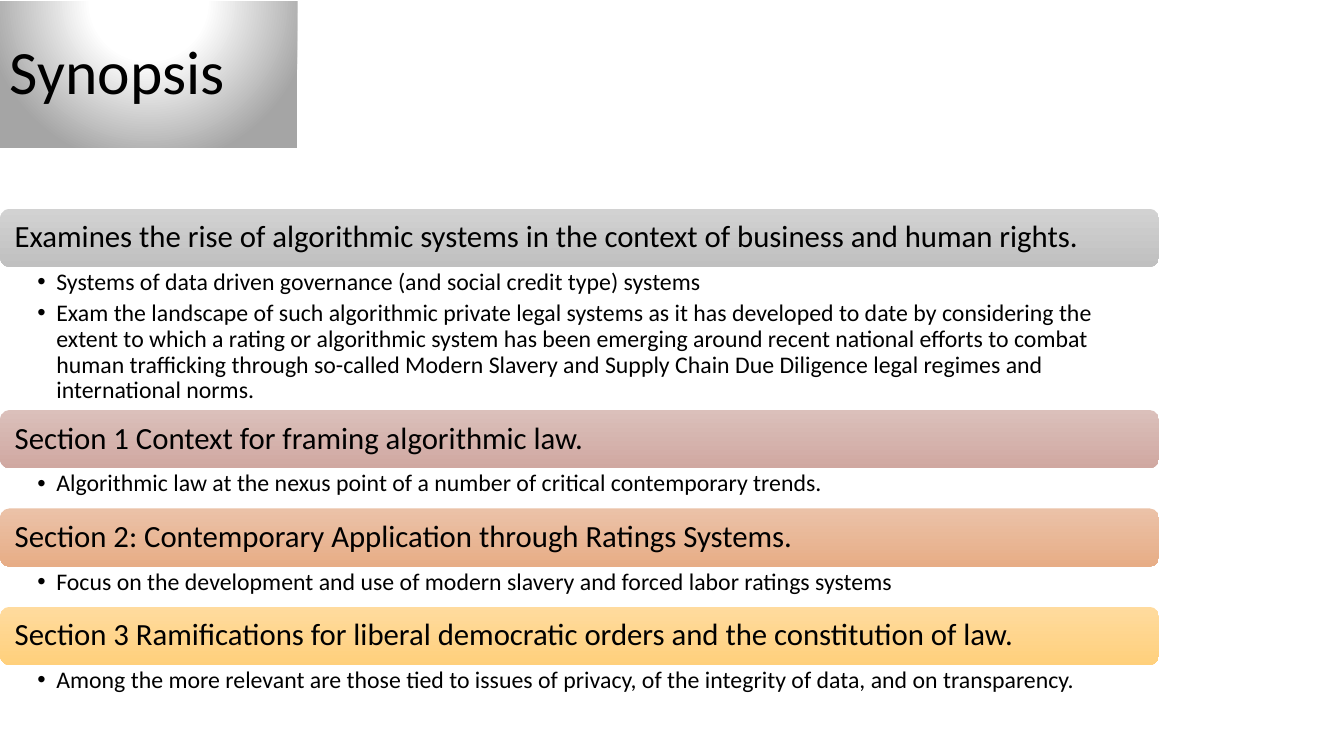
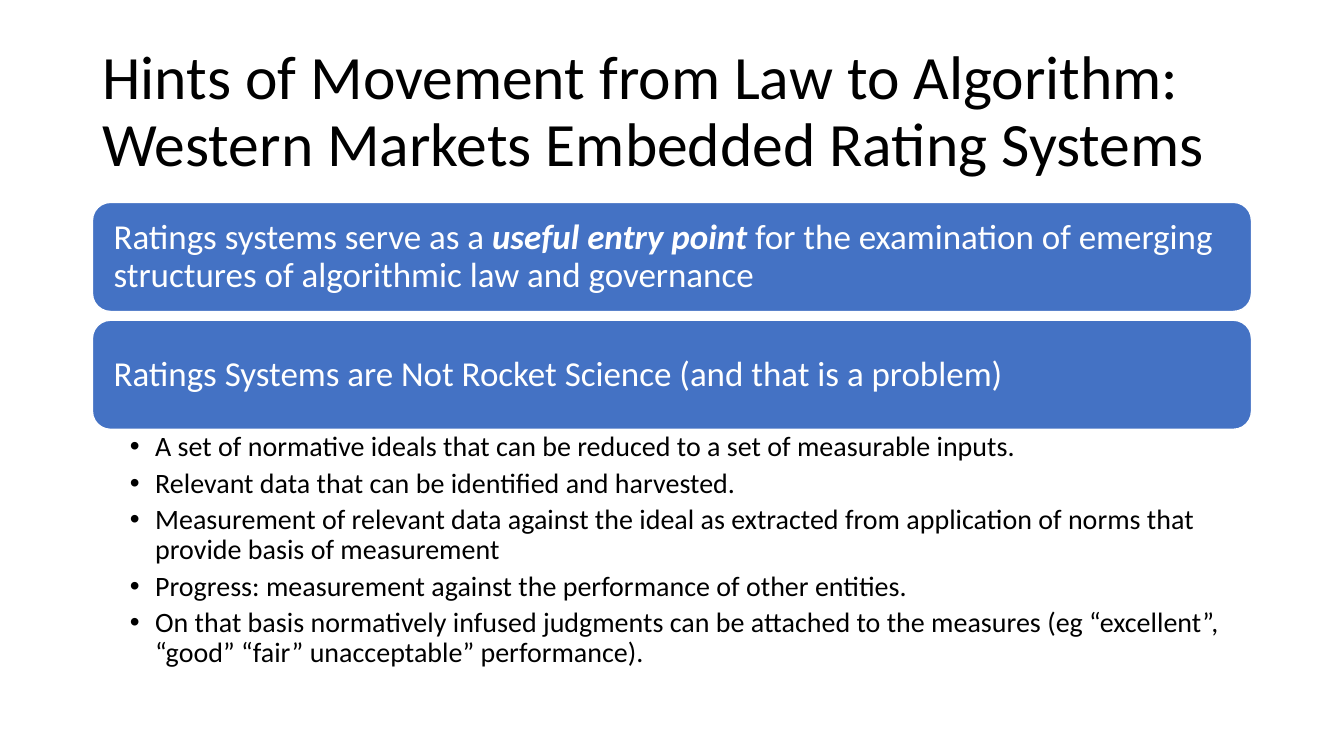
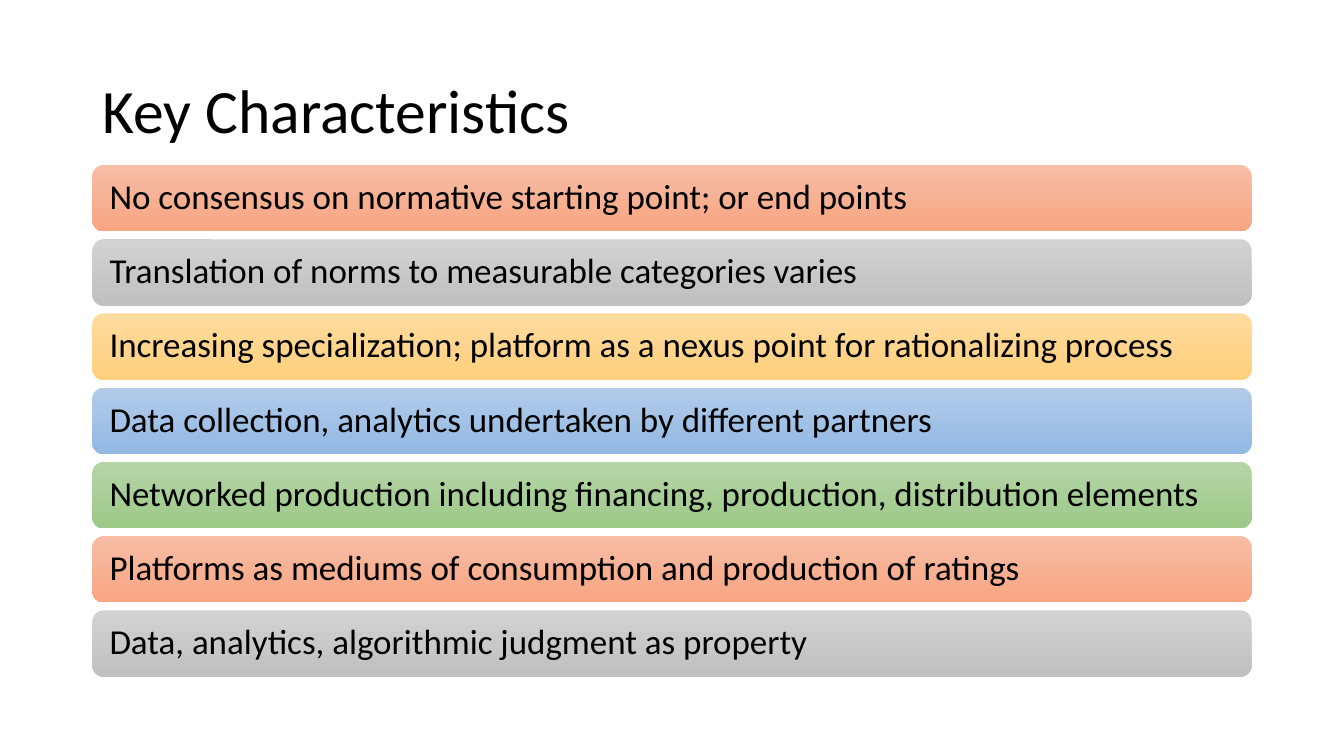
from lxml.etree import SubElement
from pptx import Presentation
from pptx.dml.color import RGBColor
from pptx.enum.shapes import MSO_SHAPE as Shape
from pptx.enum.text import MSO_ANCHOR as Anchor, MSO_AUTO_SIZE as AutoSize, PP_ALIGN as Align
from pptx.oxml import parse_xml
from pptx.oxml.ns import nsdecls, qn
from pptx.util import Cm, Pt

COLORS = {
    "ink": "000000", "paper": "FFFFFF", "blue": "4472C4", "title_edge": "A5A5A5",
    "gray_top": "D2D2D2", "gray_end": "C0C0C0",
    "rose_top": "DBC0BB", "rose_end": "D0A8A1",
    "sand_top": "EBC2A8", "sand_end": "E7AD86",
    "gold_top": "FFDB9E", "gold_end": "FFD07C",
    "coral_top": "F7BDA5", "coral_end": "F8A582",
    "sky_top": "B1CBE9", "sky_end": "93B9E4",
    "green_top": "B5D5A7", "green_end": "9CC987",
}
TITLE_AND_BODY, TITLE_ONLY = 1, 5
LEFT, WIDTH = 2.33, 29.21


def rgb(name):
    return RGBColor.from_string(COLORS[name])


class Deck:
    font = "Calibri"

    def __init__(self):
        self.prs = Presentation()
        self.prs.slide_width, self.prs.slide_height = Cm(33.87), Cm(19.05)
        self.slide = None
        self.free_body = None

    def new_slide(self, layout):
        self.slide = self.prs.slides.add_slide(self.prs.slide_layouts[layout])
        self.free_body = self.slide.placeholders[1] if layout == TITLE_AND_BODY else None

    def place(self, shape, left, top, width, height):
        shape.left, shape.top = Cm(left), Cm(top)
        shape.width, shape.height = Cm(width), Cm(height)

    def frame(self, shape, anchor, left, top, right):
        frame = shape.text_frame
        frame.word_wrap = True
        frame.auto_size = AutoSize.NONE
        frame.vertical_anchor = anchor
        frame.margin_left, frame.margin_right = Cm(left), Cm(right)
        frame.margin_top = frame.margin_bottom = Cm(top)
        return frame

    def style(self, paragraph, size, color="ink", after=0):
        paragraph.alignment = Align.LEFT
        paragraph.line_spacing = 0.9
        paragraph.space_before = Pt(0)
        paragraph.space_after = Pt(after)
        for run in paragraph.runs:
            run.font.name = self.font
            run.font.size = Pt(size)
            run.font.color.rgb = rgb(color)

    def title(self, text, left=LEFT, top=1.01, width=WIDTH):
        title = self.slide.shapes.title
        self.place(title, left, top, width, 3.68)
        paragraph = self.frame(title, Anchor.MIDDLE, 0.25, 0.13, 0.25).paragraphs[0]
        paragraph.text = text
        self.style(paragraph, 44)
        return title

    def glow(self, shape):
        stops = "".join(
            f'<a:gs pos="{position}"><a:srgbClr val="{COLORS[name]}"/></a:gs>'
            for position, name in ((0, "paper"), (35000, "paper"), (100000, "title_edge")))
        shape.element.spPr.append(parse_xml(
            f'<a:gradFill {nsdecls("a")} rotWithShape="1"><a:gsLst>{stops}</a:gsLst>'
            '<a:path path="circle"><a:fillToRect l="50000" t="-80000" r="50000" b="180000"/>'
            '</a:path></a:gradFill>'))

    def bar(self, text, left, top, height, size, inset, tone=None, emphasis=None):
        bar = self.slide.shapes.add_shape(
            Shape.ROUNDED_RECTANGLE, Cm(left), Cm(top), Cm(WIDTH), Cm(height))
        bar.shadow.inherit = False
        if tone:
            bar.fill.gradient()
            bar.fill.gradient_angle = 270
            for stop, end in zip(bar.fill.gradient_stops, ("top", "end")):
                stop.color.rgb = rgb(f"{tone}_{end}")
            bar.line.fill.background()
        else:
            bar.fill.solid()
            bar.fill.fore_color.rgb = rgb("blue")
            bar.line.color.rgb = rgb("paper")
            bar.line.width = Pt(1)
        paragraph = self.frame(bar, Anchor.MIDDLE, inset, 0.2, inset).paragraphs[0]
        for part in text.partition(emphasis) if emphasis else (text,):
            run = paragraph.add_run()
            run.text = part
            if part == emphasis:
                run.font.bold = run.font.italic = True
        self.style(paragraph, size, "ink" if tone else "paper")

    def bullets(self, items, left, top, height, size, indent, right):
        body = self.free_body or self.slide.shapes.add_textbox(0, 0, 0, 0)
        self.free_body = None
        self.place(body, left, top, WIDTH, height)
        frame = self.frame(body, Anchor.TOP, 0.94, 0.08, right)
        frame.text = "\n".join(items)
        for paragraph in frame.paragraphs:
            properties = paragraph._p.get_or_add_pPr()
            properties.set("marL", str(Cm(indent)))
            properties.set("indent", str(-Cm(indent)))
            SubElement(properties, qn("a:buFont"), typeface="Arial")
            SubElement(properties, qn("a:buChar"), char="•")
            self.style(paragraph, size, after=size * 0.22)


def synopsis(deck):
    deck.new_slide(TITLE_AND_BODY)
    deck.glow(deck.title("Synopsis", 0, 0.05, 7.49))
    sections = [
        ("gray", "Examines the rise of algorithmic systems in the context of business and human rights.", 3.6,
         ["Systems of data driven governance (and social credit type) systems",
          "Exam the landscape of such algorithmic private legal systems as it has developed to date by "
          "considering the extent to which a rating or algorithmic system has been emerging around recent "
          "national efforts to combat human trafficking through so-called Modern Slavery and Supply Chain "
          "Due Diligence legal regimes and international norms."]),
        ("rose", "Section 1 Context for framing algorithmic law.", 1.01,
         ["Algorithmic law at the nexus point of a number of critical contemporary trends."]),
        ("sand", "Section 2: Contemporary Application through Ratings Systems.", 1.01,
         ["Focus on the development and use of modern slavery and forced labor ratings systems"]),
        ("gold", "Section 3 Ramifications for liberal democratic orders and the constitution of law.", 1.01,
         ["Among the more relevant are those tied to issues of privacy, of the integrity of data, "
          "and on transparency."]),
    ]
    top, bar_height = 5.26, 1.47
    for tone, heading, list_height, points in sections:
        deck.bar(heading, 0, top, bar_height, 22, 0.3, tone)
        deck.bullets(points, 0, top + bar_height, list_height, 17, 0.48, 0.43)
        top += bar_height + list_height


def rating_systems(deck):
    deck.new_slide(TITLE_AND_BODY)
    deck.title("Hints of Movement from Law to Algorithm:\nWestern Markets Embedded Rating Systems")
    deck.bar("Ratings systems serve as a useful entry point for the examination of emerging "
             "structures of algorithmic law and governance",
             LEFT, 5.1, 2.75, 25, 0.4, emphasis="useful entry point ")
    deck.bar("Ratings Systems are Not Rocket Science (and that is a problem)",
             LEFT, 8.07, 2.75, 25, 0.4)
    deck.bullets([
        "A set of normative ideals that can be reduced to a set of measurable inputs.",
        "Relevant data that can be identified and harvested.",
        "Measurement of relevant data against the ideal as extracted from application of norms that "
        "provide basis of measurement",
        "Progress: measurement against the performance of other entities.",
        "On that basis normatively infused judgments can be attached to the measures (eg “excellent”, "
        "“good” “fair” unacceptable” performance).",
    ], LEFT, 10.82, 6.32, 20, 0.64, 0.48)


def key_characteristics(deck):
    deck.new_slide(TITLE_ONLY)
    deck.title("Key Characteristics")
    traits = [
        ("coral", "No consensus on normative starting point; or end points"),
        ("gray", "Translation of norms to measurable categories varies"),
        ("gold", "Increasing specialization; platform as a nexus point for rationalizing process"),
        ("sky", "Data collection, analytics undertaken by different partners"),
        ("green", "Networked production including financing, production, distribution elements"),
        ("coral", "Platforms as mediums of consumption and production of ratings"),
        ("gray", "Data, analytics, algorithmic judgment as property"),
    ]
    for row, (tone, trait) in enumerate(traits):
        deck.bar(trait, LEFT, 4.16 + row * 1.87, 1.67, 25, 0.35, tone)


def main():
    deck = Deck()
    synopsis(deck)
    rating_systems(deck)
    key_characteristics(deck)
    deck.prs.save("out.pptx")


if __name__ == "__main__":
    main()
